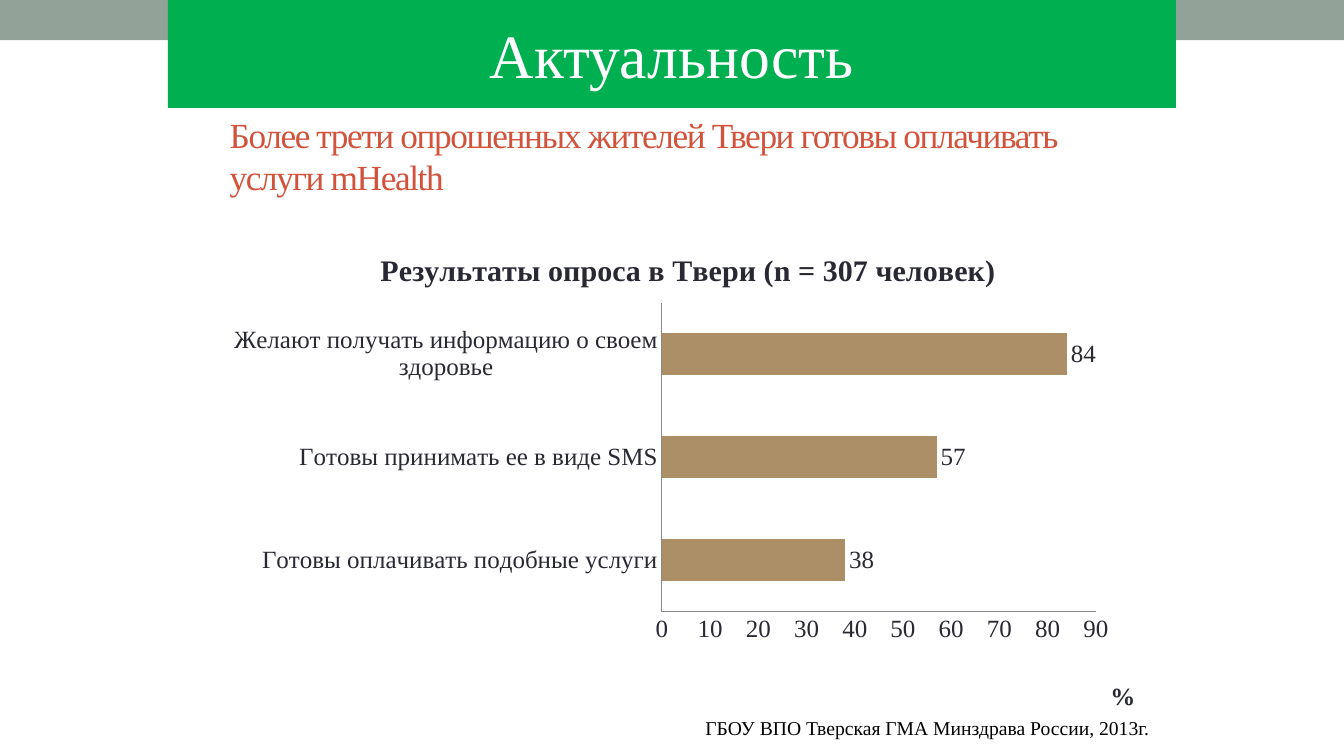
from dataclasses import dataclass

from lxml import etree
from pptx import Presentation
from pptx.chart.data import CategoryChartData
from pptx.dml.color import RGBColor
from pptx.enum.chart import XL_CHART_TYPE, XL_LABEL_POSITION, XL_TICK_MARK
from pptx.enum.shapes import MSO_SHAPE
from pptx.enum.text import MSO_ANCHOR, PP_ALIGN
from pptx.oxml.ns import qn
from pptx.util import Inches, Pt

BAR_CLUSTERED = XL_CHART_TYPE.BAR_CLUSTERED
OUTSIDE_END = XL_LABEL_POSITION.OUTSIDE_END
NO_TICK = XL_TICK_MARK.NONE
RECTANGLE = MSO_SHAPE.RECTANGLE
TOP, MIDDLE = MSO_ANCHOR.TOP, MSO_ANCHOR.MIDDLE
LEFT, CENTER = PP_ALIGN.LEFT, PP_ALIGN.CENTER

# Slide grid: 80 columns by 45 rows of square cells
COLUMNS, ROWS = 80, 45
SLIDE_WIDTH, SLIDE_HEIGHT = Inches(13.333), Inches(7.5)


@dataclass(frozen=True)
class Theme:
    font: str = "Times New Roman"
    band: str = "93A299"
    banner: str = "00B050"
    heading: str = "FFFFFF"
    statement: str = "D2533C"
    bar: str = "AD8F67"
    chart_text: str = "292934"
    axis: str = "898989"
    source: str = "000000"
    heading_size: float = 44
    statement_size: float = 25.2
    chart_title_size: float = 21.6
    chart_size: float = 18
    source_size: float = 14


@dataclass(frozen=True)
class Area:
    column: float
    row: float
    columns: float
    rows: float

    def emu(self) -> tuple[int, int, int, int]:
        return (
            round(SLIDE_WIDTH * self.column / COLUMNS),
            round(SLIDE_HEIGHT * self.row / ROWS),
            round(SLIDE_WIDTH * self.columns / COLUMNS),
            round(SLIDE_HEIGHT * self.rows / ROWS),
        )


@dataclass(frozen=True)
class Caption:
    area: Area
    text: str
    size: float
    color: str
    fill: str = ""
    align: PP_ALIGN = LEFT
    anchor: MSO_ANCHOR = MIDDLE
    spacing: float = 0


THEME = Theme()
CHART_AREA = Area(13.08, 13.5, 54.78, 29.22)
SURVEY_TITLE = "Результаты опроса в Твери (n = 307 человек)"
ANSWERS = {
    "Готовы оплачивать подобные услуги": 38,
    "Готовы принимать ее в виде SMS": 57,
    "Желают получать информацию о своем здоровье": 84,
}

BAND = Caption(Area(0, 0, COLUMNS, 2.4), "", THEME.source_size, THEME.source, THEME.band)
STATEMENT = Caption(
    Area(13.08, 6.4, 54, 5.7),
    "Более трети опрошенных жителей Твери готовы оплачивать услуги mHealth",
    THEME.statement_size, THEME.statement, spacing=-1,
)
SOURCE = Caption(
    Area(41.4, 42.3, 28.56, 2.34),
    "ГБОУ ВПО Тверская ГМА Минздрава России, 2013г.",
    THEME.source_size, THEME.source, anchor=TOP,
)
BANNER = Caption(
    Area(10, 0, 60, 6.42), "Актуальность",
    THEME.heading_size, THEME.heading, THEME.banner, CENTER,
)


def rgb(color: str) -> RGBColor:
    return RGBColor.from_string(color)


def style(font, size: float, color: str, bold: bool = False) -> None:
    font.name, font.size, font.bold = THEME.font, Pt(size), bold
    font.color.rgb = rgb(color)


def draw_caption(slide, caption: Caption) -> None:
    if caption.fill:
        holder = slide.shapes.add_shape(RECTANGLE, *caption.area.emu())
        holder.shadow.inherit = False
        holder.fill.solid()
        holder.fill.fore_color.rgb = rgb(caption.fill)
        holder.line.fill.background()
    else:
        holder = slide.shapes.add_textbox(*caption.area.emu())
    if not caption.text:
        return
    frame = holder.text_frame
    frame.word_wrap = True
    frame.vertical_anchor = caption.anchor
    paragraph = frame.paragraphs[0]
    paragraph.text = caption.text
    paragraph.alignment = caption.align
    style(paragraph.font, caption.size, caption.color)
    if caption.spacing:
        run = paragraph.runs[0]
        run.font._element.set("spc", str(round(caption.spacing * 100)))


def set_layout(parent, index: int, **shares: float) -> None:
    """Place a chart part by shares of the chart's size."""
    for old in parent.findall(qn("c:layout")):
        parent.remove(old)
    layout = etree.Element(qn("c:layout"))
    manual = etree.SubElement(layout, qn("c:manualLayout"))
    if "w" in shares:
        etree.SubElement(manual, qn("c:layoutTarget")).set("val", "inner")
    for axis in "xy":
        etree.SubElement(manual, qn(f"c:{axis}Mode")).set("val", "edge")
    for key, share in shares.items():
        etree.SubElement(manual, qn(f"c:{key}")).set("val", str(share))
    parent.insert(index, layout)


def draw_title(title, text: str, size: float, x: float, y: float) -> None:
    paragraph = title.text_frame.paragraphs[0]
    paragraph.text = text
    style(paragraph.font, size, THEME.chart_text, bold=True)
    set_layout(title._element, 1, x=x, y=y)


def draw_survey(slide) -> None:
    survey = CategoryChartData()
    survey.categories = list(ANSWERS)
    survey.add_series(SURVEY_TITLE, list(ANSWERS.values()))
    chart = slide.shapes.add_chart(BAR_CLUSTERED, *CHART_AREA.emu(), survey).chart
    style(chart.font, THEME.chart_size, THEME.chart_text)
    chart.has_legend = False
    chart.has_title = True
    draw_title(chart.chart_title, SURVEY_TITLE, THEME.chart_title_size, 0.17, 0.04)

    # Axes
    percent = chart.value_axis
    for axis in (chart.category_axis, percent):
        axis.has_major_gridlines = False
        axis.major_tick_mark = axis.minor_tick_mark = NO_TICK
        axis.format.line.color.rgb = rgb(THEME.axis)
        axis.format.line.width = Pt(0.75)
    percent.minimum_scale, percent.maximum_scale, percent.major_unit = 0, 90, 10
    percent.has_title = True
    draw_title(percent.axis_title, "%", THEME.chart_size, 0.97, 0.93)

    # Bars and their values
    plot = chart.plots[0]
    plot.gap_width = 150
    plot.vary_by_categories = False
    bars = plot.series[0].format.fill
    bars.solid()
    bars.fore_color.rgb = rgb(THEME.bar)
    plot.has_data_labels = True
    values = plot.data_labels
    values.show_value = True
    values.position = OUTSIDE_END
    style(values.font, THEME.chart_size, THEME.chart_text)
    plot_area = chart._chartSpace.find(".//" + qn("c:plotArea"))
    set_layout(plot_area, 0, x=0.484, y=0.157, w=0.475, h=0.64)


def main() -> None:
    deck = Presentation()
    deck.slide_width, deck.slide_height = SLIDE_WIDTH, SLIDE_HEIGHT
    slide = deck.slides.add_slide(deck.slide_layouts[6])
    draw_caption(slide, BAND)
    draw_caption(slide, STATEMENT)
    draw_survey(slide)
    draw_caption(slide, SOURCE)
    draw_caption(slide, BANNER)
    deck.save("out.pptx")


if __name__ == "__main__":
    main()
